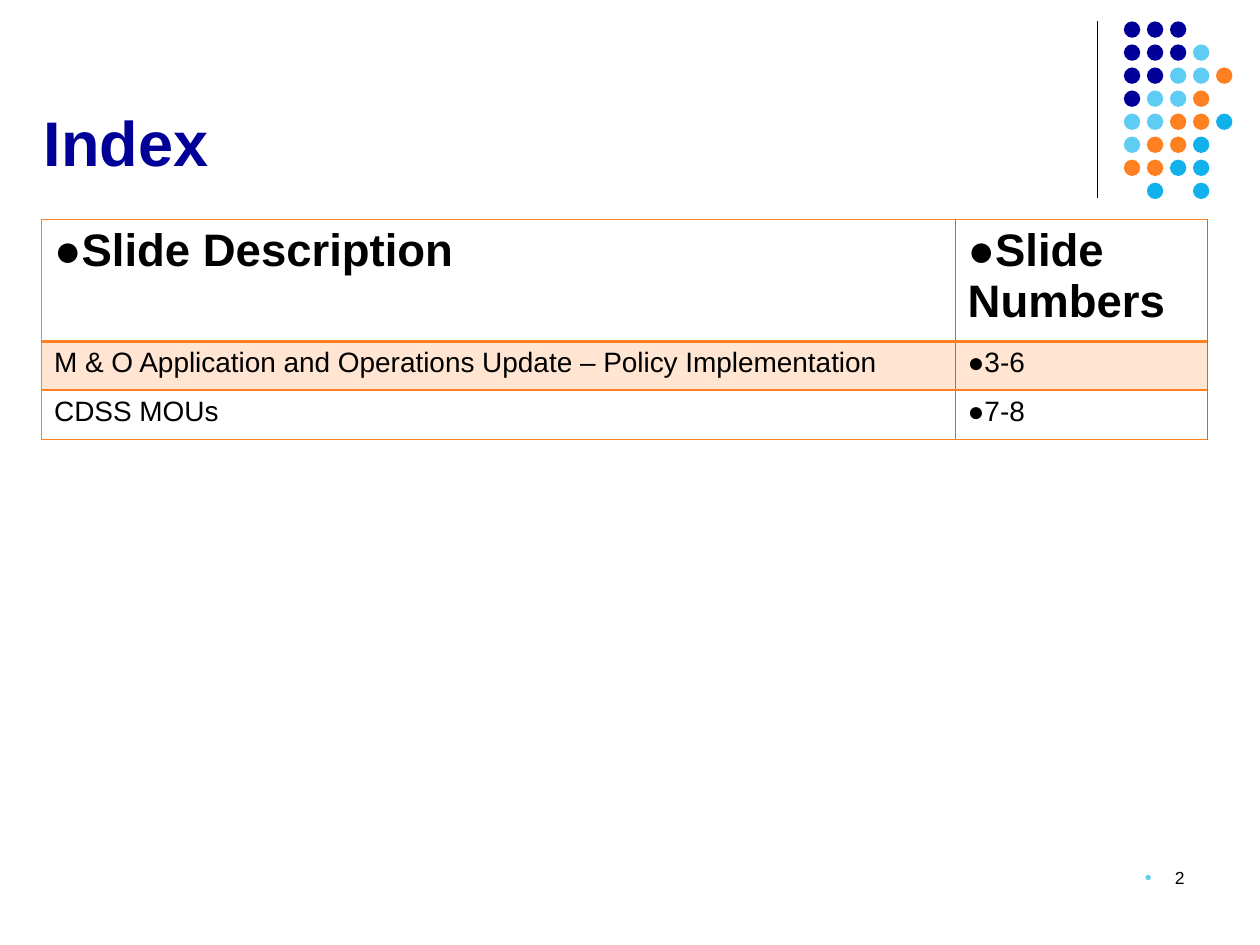
from lxml import etree
from pptx import Presentation
from pptx.dml.color import RGBColor
from pptx.enum.shapes import MSO_CONNECTOR, MSO_SHAPE
from pptx.enum.text import MSO_ANCHOR, PP_ALIGN
from pptx.oxml.ns import qn
from pptx.util import Inches, Pt

STRAIGHT = MSO_CONNECTOR.STRAIGHT
OVAL = MSO_SHAPE.OVAL
TOP, BOTTOM = MSO_ANCHOR.TOP, MSO_ANCHOR.BOTTOM
LEFT, RIGHT = PP_ALIGN.LEFT, PP_ALIGN.RIGHT

BLACK = RGBColor(0x00, 0x00, 0x00)
NAVY = RGBColor(0x00, 0x00, 0x99)
SKY = RGBColor(0x5E, 0xCC, 0xF3)
ORANGE = RGBColor(0xFF, 0x80, 0x21)
BLUE = RGBColor(0x11, 0xB2, 0xEB)
GRAY = RGBColor(0x80, 0x80, 0x80)

DOT_COLORS = {"N": NAVY, "S": SKY, "O": ORANGE, "B": BLUE}
DOT_ROWS = ["NNN", "NNNS", "NNSSO", "NSSO", "SSOOB", "SOOB", "OOBB", " B B"]
DOT_PITCH = 1.28 / 7

INDEX_ROWS = [
    ("Slide Description", "Slide Numbers"),
    ("M & O Application and Operations Update – Policy Implementation", "3-6"),
    ("CDSS MOUs", "7-8"),
]
COLUMN_WIDTHS = [7.25, 2]
ROW_HEIGHTS = [0.38, 0.39, 0.39]


class SlideBuilder:
    font_name = "Arial"

    def __init__(self, slide):
        self.slide = slide

    def style(self, paragraph, size, color=BLACK, bold=False, align=LEFT):
        paragraph.alignment = align
        font = paragraph.font
        font.name = self.font_name
        font.size = Pt(size)
        font.bold = bold
        font.color.rgb = color

    def bullet(self, paragraph, color, percent, indent=0):
        properties = paragraph._p.get_or_add_pPr()
        properties.set("marL", str(Inches(indent)))
        properties.set("indent", str(-Inches(indent)))
        bullet_color = etree.SubElement(properties, qn("a:buClr"))
        etree.SubElement(bullet_color, qn("a:srgbClr"), val=str(color))
        etree.SubElement(properties, qn("a:buSzPct"), val=str(percent * 1000))
        etree.SubElement(properties, qn("a:buFont"), typeface=self.font_name)
        etree.SubElement(properties, qn("a:buChar"), char="●")

    def text(self, words, left, top, width, height, anchor=TOP):
        box = self.slide.shapes.add_textbox(
            Inches(left), Inches(top), Inches(width), Inches(height)
        )
        box.text_frame.word_wrap = True
        box.text_frame.vertical_anchor = anchor
        paragraph = box.text_frame.paragraphs[0]
        paragraph.text = words
        return paragraph

    def line(self, x1, y1, x2, y2, color, width):
        connector = self.slide.shapes.add_connector(
            STRAIGHT, Inches(x1), Inches(y1), Inches(x2), Inches(y2)
        )
        connector.line.color.rgb = color
        connector.line.width = Pt(width)
        etree.SubElement(connector._element.spPr, qn("a:effectLst"))

    def dot(self, left, top, size, color):
        shape = self.slide.shapes.add_shape(
            OVAL, Inches(left), Inches(top), Inches(size), Inches(size)
        )
        shape.shadow.inherit = False
        shape.fill.solid()
        shape.fill.fore_color.rgb = color
        shape.line.fill.background()

    def borders(self, cell, edges):
        properties = cell._tc.get_or_add_tcPr()
        for position, (side, color, width) in enumerate(edges):
            border = etree.Element(qn(f"a:ln{side}"), w=str(Pt(width)))
            fill = etree.SubElement(border, qn("a:solidFill"))
            etree.SubElement(fill, qn("a:srgbClr"), val=str(color))
            properties.insert(position, border)

    def tint(self, cell, color, percent):
        cell.fill.solid()
        cell.fill.fore_color.rgb = color
        color_element = cell._tc.tcPr.find(".//" + qn("a:srgbClr"))
        etree.SubElement(color_element, qn("a:alpha"), val=str(percent * 1000))

    def table(self, rows, left, top, widths, heights):
        table = self.slide.shapes.add_table(
            len(rows), len(widths), Inches(left), Inches(top),
            Inches(sum(widths)), Inches(sum(heights)),
        ).table
        table.horz_banding = False
        for column, width in zip(table.columns, widths):
            column.width = Inches(width)
        for row_index, (row, height) in enumerate(zip(rows, heights)):
            table.rows[row_index].height = Inches(height)
            for column_index, words in enumerate(row):
                self.cell(table.cell(row_index, column_index), words, row_index, column_index)

    def cell(self, cell, words, row_index, column_index):
        header = row_index == 0
        cell.text = words
        paragraph = cell.text_frame.paragraphs[0]
        if header or column_index == 1:
            self.bullet(paragraph, BLACK, 100)
        self.style(paragraph, 26 if header else 16, bold=header)
        if row_index == 1:
            self.tint(cell, ORANGE, 20)
        else:
            cell.fill.background()
        left_edge = ("L", ORANGE, 1) if column_index == 0 else ("L", GRAY, 0.5)
        self.borders(cell, [
            left_edge,
            ("R", GRAY, 0.5),
            ("T", ORANGE, 2 if row_index == 1 else 1),
            ("B", ORANGE, 2 if header else 1),
        ])


def main():
    presentation = Presentation()
    presentation.slide_width = Inches(10)
    presentation.slide_height = Inches(7.5)
    builder = SlideBuilder(presentation.slides.add_slide(presentation.slide_layouts[6]))

    builder.line(8.71, 0.17, 8.71, 1.57, BLACK, 0.75)
    for row_index, row in enumerate(DOT_ROWS):
        for column_index, key in enumerate(row):
            if key in DOT_COLORS:
                builder.dot(
                    8.92 + column_index * DOT_PITCH,
                    0.17 + row_index * DOT_PITCH,
                    0.13,
                    DOT_COLORS[key],
                )

    title = builder.text("Index", 0.25, 0.27, 8.42, 1.2, BOTTOM)
    builder.style(title, 36, NAVY, bold=True)

    builder.table(INDEX_ROWS, 0.33, 1.74, COLUMN_WIDTHS, ROW_HEIGHTS)

    slide_number = builder.text("2", 7.17, 6.83, 2.33, 0.5)
    builder.bullet(slide_number, SKY, 70, indent=0.24)
    builder.style(slide_number, 10, align=RIGHT)

    presentation.save("out.pptx")


if __name__ == "__main__":
    main()
